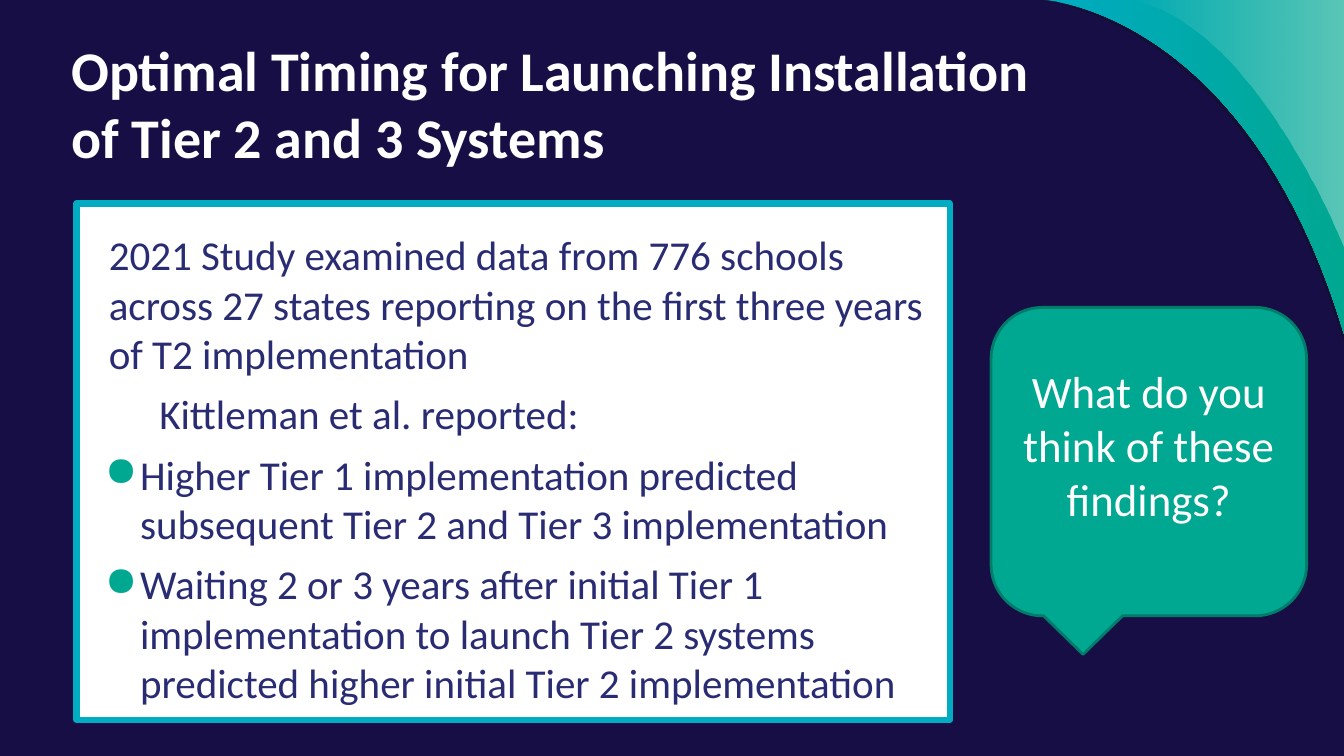
from lxml import etree
from pptx import Presentation, util as u
from pptx.dml.color import RGBColor
from pptx.enum import shapes, text
from pptx.oxml.ns import qn

PX = 9144  # EMU per px, 100 px to the inch
W, H = 1333, 750
TEAL, GREEN, WHITE, NAVY = "00ACC2", "00A791", "FFFFFF", "292C73"


def rgb(value):
    return RGBColor.from_string(value)


def add_text(p, content, **font):
    r = p.add_run()
    r.text = content
    r.font.name = "Calibri"
    color = font.pop("color")
    for name, value in font.items():
        setattr(r.font, name, value)
    r.font.color.rgb = rgb(color)


prs = Presentation()
prs.slide_width, prs.slide_height = W * PX, H * PX
s = prs.slides.add_slide(prs.slide_layouts[6])
s.background.fill.solid()
s.background.fill.fore_color.rgb = rgb("160E44")

# Curved corner: Bezier points, then (colour, opacity %) stops from left to right
corner = [
    ([(1029, 0), (1029, 0), (1235, 11), (W, 339)], [("12102F", 79)]),
    ([(1036, 0), (1036, 0), (1237, 11), (W, 331)], [(TEAL, 100), (GREEN, 100)]),
    ([(1116, 0), (1241, 15), (W, 245), (W, 245)], [(WHITE, 0), (WHITE, 36)]),
]
STEPS = 40
for bezier, stops in corner:
    curve = []
    for i in range(1, STEPS + 1):
        t = i / STEPS
        weights = ((1 - t) ** 3, 3 * t * (1 - t) ** 2, 3 * t * t * (1 - t), t ** 3)
        curve.append(tuple(round(PX * sum(w * pt[axis] for w, pt in zip(weights, bezier)))
                           for axis in (0, 1)))
    fb = s.shapes.build_freeform(bezier[0][0] * PX, 0)
    fb.add_line_segments(curve + [(W * PX, 0)], close=True)
    sp = fb.convert_to_shape()
    sp.shadow.inherit = False
    sp.line.fill.background()
    if len(stops) == 1:
        sp.fill.solid()
        sp.fill.fore_color.rgb = rgb(stops[0][0])
    else:
        sp.fill.gradient()
        sp.fill.gradient_angle = 0
        for stop, (color, _) in zip(sp.fill.gradient_stops, stops):
            stop.color.rgb = rgb(color)
    fill_colors = [c for c in sp._element.spPr.iter(qn("a:srgbClr"))]
    for clr, (_, opacity) in zip(fill_colors, stops):
        if opacity < 100:
            etree.SubElement(clr, qn("a:alpha"), val=str(opacity * 1000))

# Title
title = s.shapes.add_textbox(61 * PX, 25 * PX, 1026 * PX, 92 * PX)
add_text(title.text_frame.paragraphs[0],
         "Optimal Timing for Launching Installation of Tier 2 and 3 Systems",
         size=u.Pt(40), bold=True, color=WHITE)

# Study panel and question callout
kinds = shapes.MSO_SHAPE
panel = s.shapes.add_shape(kinds.RECTANGLE, 76 * PX, 202 * PX, 866 * PX, 512 * PX)
callout = s.shapes.add_shape(kinds.ROUNDED_RECTANGULAR_CALLOUT,
                             983 * PX, 305 * PX, 313 * PX, 306 * PX)
for sp, fill, line, width in [(panel, WHITE, TEAL, 4.5), (callout, GREEN, "007C6B", 2)]:
    sp.shadow.inherit = False
    sp.fill.solid()
    sp.fill.fore_color.rgb = rgb(fill)
    sp.line.color.rgb = rgb(line)
    sp.line.width = u.Pt(width)
etree.SubElement(panel.line._get_or_add_ln(), qn("a:round"))

# Text frames: anchor and insets (left, top, right, bottom)
anchors = text.MSO_ANCHOR
frames = [
    (title, anchors.TOP, (10, 10, 10, 10)),
    (panel, anchors.BOTTOM, (13, 13, 13, 13)),
    (callout, anchors.MIDDLE, (13, 7, 13, 41)),
]
for sp, anchor, insets in frames:
    tf = sp.text_frame
    tf.word_wrap = True
    tf.vertical_anchor = anchor
    for side, inset in zip(("left", "top", "right", "bottom"), insets):
        setattr(tf, f"margin_{side}", inset * PX)

# Findings
findings = [
    (False, "2021 Study examined data from 776 schools across 27 states reporting on "
            "the first three years of T2 implementation"),
    (False, "\tKittleman et al. reported:"),
    (True, "Higher Tier 1 implementation predicted subsequent Tier 2 and Tier 3 implementation"),
    (True, "Waiting 2 or 3 years after initial Tier 1 implementation to launch Tier 2 "
           "systems predicted higher initial Tier 2 implementation"),
]
tf = panel.text_frame
for i, (bulleted, content) in enumerate(findings):
    p = tf.add_paragraph() if i else tf.paragraphs[0]
    p.alignment = text.PP_ALIGN.LEFT
    p.space_after = u.Pt(8)
    add_text(p, content, size=u.Pt(29.3), color=NAVY)
    pPr = p._p.get_or_add_pPr()
    margin, indent = (50, -35) if bulleted else (19, 0)
    pPr.set("marL", str(margin * PX))
    pPr.set("indent", str(indent * PX))
    if bulleted:
        bullet_color = etree.SubElement(pPr, qn("a:buClr"))
        etree.SubElement(bullet_color, qn("a:srgbClr"), val=GREEN)
        etree.SubElement(pPr, qn("a:buChar"), char="●")

# Question
p = callout.text_frame.paragraphs[0]
p.alignment = text.PP_ALIGN.CENTER
add_text(p, "What do you think of these findings?", size=u.Pt(32), color=WHITE)

prs.save("out.pptx")
